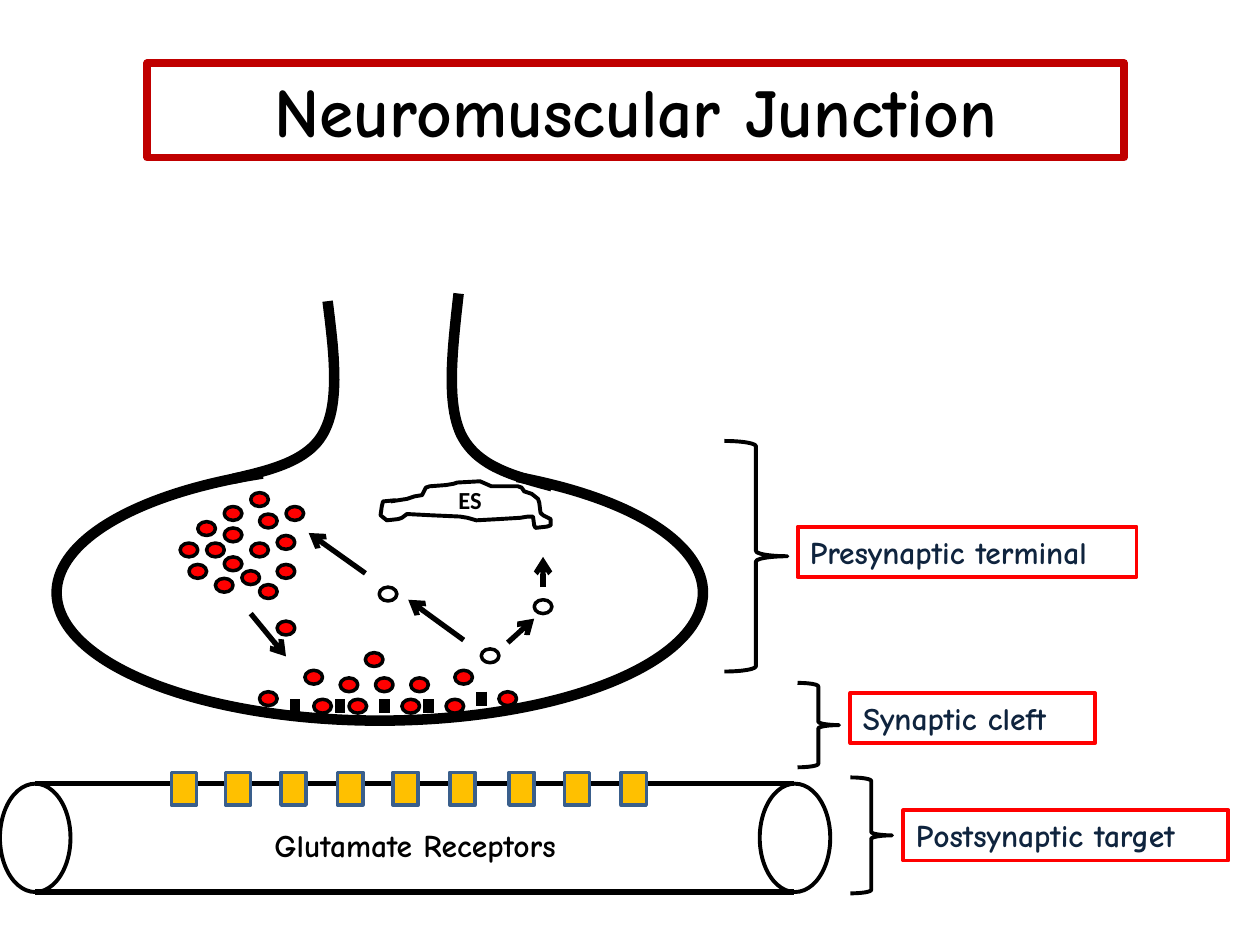
from dataclasses import dataclass

from lxml.etree import SubElement
from pptx import Presentation
from pptx.dml.color import RGBColor
from pptx.enum.shapes import MSO_CONNECTOR as Connector, MSO_SHAPE as Preset
from pptx.enum.text import MSO_ANCHOR as Anchor, MSO_AUTO_SIZE as AutoSize, PP_ALIGN as Align
from pptx.oxml.ns import qn
from pptx.util import Pt

PX = 9144  # EMU; 100 px to the inch


@dataclass(frozen=True)
class Theme:
    black: str = "000000"
    white: str = "FFFFFF"
    red: str = "FF0000"
    title_border: str = "C00000"
    label_text: str = "0F243E"
    receptor: str = "FFC000"
    receptor_border: str = "3A5F8C"
    display_font: str = "Comic Neue"
    plain_font: str = "Calibri"
    title_size: float = 39.6
    label_size: float = 18
    small_size: float = 14
    membrane: float = 6
    title_line: float = 4.5
    arrow: float = 3
    outline: float = 2.25
    thin: float = 2


def bezier(start, control_1, control_2, end, steps=24):
    """Points along a cubic curve, without its start."""
    points = []
    for step in range(1, steps + 1):
        t = step / steps
        weights = ((1 - t) ** 3, 3 * t * (1 - t) ** 2, 3 * t * t * (1 - t), t ** 3)
        corners = (start, control_1, control_2, end)
        points.append(tuple(sum(w * c[axis] for w, c in zip(weights, corners))
                            for axis in (0, 1)))
    return points


class SlideBuilder:
    def __init__(self, slide, theme):
        self.slide = slide
        self.theme = theme

    def style(self, shape, fill, line, width):
        if fill:
            shape.fill.solid()
            shape.fill.fore_color.rgb = RGBColor.from_string(fill)
        else:
            shape.fill.background()
        shape.line.color.rgb = RGBColor.from_string(line)
        shape.line.width = Pt(width)
        shape.shadow.inherit = False

    def add_run(self, shape, text, size, color, font, align=Align.LEFT, anchor=Anchor.TOP):
        frame = shape.text_frame
        frame.word_wrap = True
        frame.auto_size = AutoSize.NONE
        frame.vertical_anchor = anchor
        paragraph = frame.paragraphs[0]
        paragraph.alignment = align
        run = paragraph.add_run()
        run.text = text
        run.font.name = font
        run.font.size = Pt(size)
        run.font.bold = True
        run.font.color.rgb = RGBColor.from_string(color)

    def title(self, text, left, top, width, height):
        shape = self.slide.shapes.title
        shape.left, shape.top = left * PX, top * PX
        shape.width, shape.height = width * PX, height * PX
        self.style(shape, None, self.theme.title_border, self.theme.title_line)
        self.add_run(shape, text, self.theme.title_size, self.theme.black,
                     self.theme.display_font, Align.CENTER, Anchor.MIDDLE)

    def preset(self, kind, left, top, width, height, fill=None, line=None, weight=None):
        shape = self.slide.shapes.add_shape(kind, left * PX, top * PX, width * PX, height * PX)
        self.style(shape, fill, line or self.theme.black, weight or self.theme.outline)
        return shape

    def arc(self, left, top, width, height, start, end):
        """Clockwise arc between two angles in degrees."""
        shape = self.preset(Preset.ARC, left, top, width, height, weight=self.theme.membrane)
        for index, angle in enumerate((start, end)):
            shape.adjustments[index] = angle * 60000 / 100000

    def vesicle(self, left, top, fill):
        self.preset(Preset.OVAL, left, top, 14, 11, fill, weight=self.theme.thin)

    def outline(self, points, width):
        emu = [(x * PX, y * PX) for x, y in points]
        builder = self.slide.shapes.build_freeform(*emu[0])
        builder.add_line_segments(emu[1:], close=False)
        self.style(builder.convert_to_shape(), None, self.theme.black, width)

    def line(self, start, end, width, arrow=False):
        connector = self.slide.shapes.add_connector(
            Connector.STRAIGHT, *(length * PX for length in (*start, *end)))
        connector.line.color.rgb = RGBColor.from_string(self.theme.black)
        connector.line.width = Pt(width)
        properties = connector._element.spPr
        if arrow:
            SubElement(properties.find(qn("a:ln")), qn("a:tailEnd"), type="arrow")
        SubElement(properties, qn("a:effectLst"))

    def text(self, text, left, top, width, height, size, font):
        box = self.slide.shapes.add_textbox(left * PX, top * PX, width * PX, height * PX)
        self.add_run(box, text, size, self.theme.black, font)

    def braced_label(self, text, box, brace):
        shape = self.preset(Preset.RECTANGLE, *box, line=self.theme.red)
        self.add_run(shape, text, self.theme.label_size, self.theme.label_text,
                     self.theme.display_font)
        self.preset(Preset.RIGHT_BRACE, *brace)


VESICLE_POOL = [
    (143, 431), (178, 419), (178, 442), (164, 431), (192, 453), (206, 408), (171, 459),
    (157, 414), (199, 431), (150, 448), (206, 464), (227, 402), (199, 391), (220, 448),
    (220, 425), (178, 402), (220, 493),
]
DOCKED_VESICLES = [
    (206, 549), (249, 555), (277, 555), (319, 555), (354, 555), (396, 549), (242, 532),
    (326, 538), (290, 518), (361, 532), (298, 538), (270, 538),
]
EMPTY_VESICLES = [(382, 515), (424, 476), (301, 466)]
ACTIVE_ZONES = [(234, 555), (270, 555), (305, 555), (340, 555), (382, 549)]
CYCLE_ARROWS = [
    ((199, 487), (227, 521)), ((403, 510), (424, 491)), ((431, 466), (431, 442)),
    ((368, 508), (324, 476)), ((290, 455), (245, 423)),
]
ENDOSOME = [
    (314, 397), (304, 398), (303, 402), (302, 409), (307, 413), (316, 412), (319, 411),
    (323, 408), (342, 409), (365, 410), (371, 411), (378, 413), (396, 412), (413, 411),
    (419, 410), (423, 410), (424, 417), (425, 419), (434, 418), (437, 417), (437, 412),
    (431, 409), (429, 407), (428, 399), (427, 396), (422, 392), (416, 390), (414, 387),
    (411, 386), (390, 386), (381, 382), (363, 383), (360, 384), (354, 385), (341, 386),
    (338, 387), (335, 393), (329, 394), (323, 396), (310, 398), (310, 399),
]
NECK_SIDES = [
    [(185, 380), (215, 373), (245, 366), (257, 343), (270, 319), (265, 279), (260, 239)],
    [(438, 386), (409, 378), (379, 371), (366, 345), (354, 320), (359, 277), (364, 233)],
]
RECEPTOR_LEFTS = [136, 179, 223, 268, 312, 357, 404, 448, 493]
LABELS = [
    ("Presynaptic terminal", (633, 418, 269, 40), (575, 350, 50, 183)),
    ("Synaptic cleft", (675, 550, 194, 40), (633, 542, 33, 67)),
    ("Postsynaptic target", (717, 643, 258, 40), (675, 617, 33, 92)),
]


def draw_terminal(builder, theme):
    builder.arc(45, 369, 513, 203, 319.84, 225.49)
    for x, y in ACTIVE_ZONES:
        builder.line((x, y), (x, y + 11), theme.membrane)
    for position in VESICLE_POOL + DOCKED_VESICLES:
        builder.vesicle(*position, theme.red)
    for position in EMPTY_VESICLES:
        builder.vesicle(*position, theme.white)
    for start, end in CYCLE_ARROWS:
        builder.line(start, end, theme.arrow, arrow=True)
    builder.outline(ENDOSOME, theme.outline)
    builder.text("ES", 354, 380, 63, 43, theme.small_size, theme.plain_font)
    for side in NECK_SIDES:
        points = side[:1] + bezier(*side[:4]) + bezier(*side[3:])
        builder.outline(points, theme.membrane)


def draw_muscle_fibre(builder, theme):
    for left in (0, 603):
        builder.preset(Preset.OVAL, left, 622, 56, 86, theme.white)
    for y in (622, 708):
        builder.line((28, y), (630, y), theme.arrow)
    for left in RECEPTOR_LEFTS:
        builder.preset(Preset.RECTANGLE, left, 613, 20, 26, theme.receptor,
                       theme.receptor_border, theme.thin)
    builder.text("Glutamate Receptors", 208, 651, 275, 40,
                 theme.label_size, theme.display_font)


def main():
    presentation = Presentation()
    presentation.slide_width, presentation.slide_height = 1000 * PX, 750 * PX
    theme = Theme()
    slide = presentation.slides.add_slide(presentation.slide_layouts[5])
    builder = SlideBuilder(slide, theme)
    builder.title("Neuromuscular Junction", 117, 50, 775, 75)
    draw_terminal(builder, theme)
    draw_muscle_fibre(builder, theme)
    for label in LABELS:
        builder.braced_label(*label)
    presentation.save("out.pptx")


if __name__ == "__main__":
    main()
